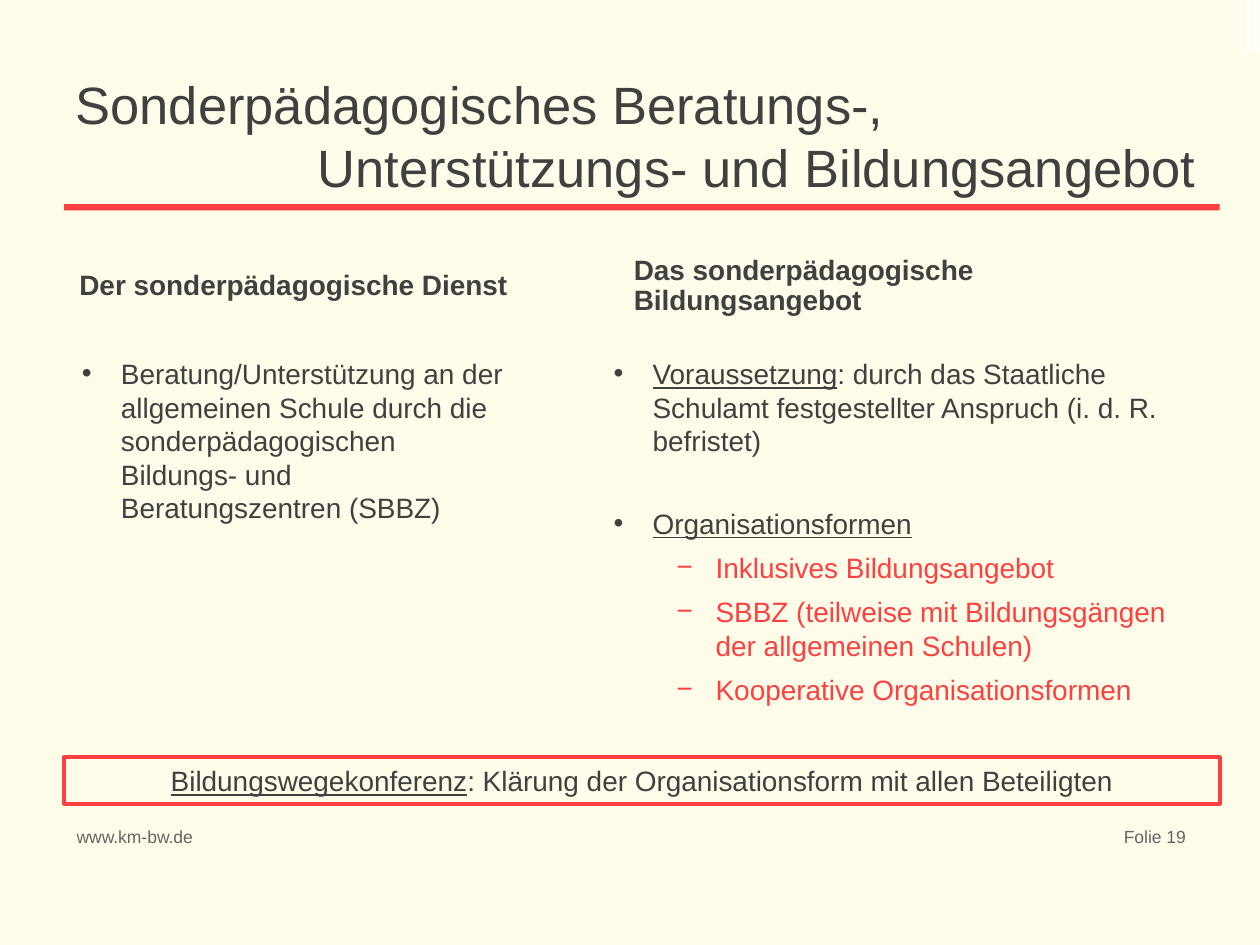
import pptx
import pptx.dml.color
import pptx.enum.shapes
import pptx.enum.text
import pptx.oxml
import pptx.oxml.ns
import pptx.util

COLORS = {
    "paper": "FFFDE9",
    "text": "404040",
    "accent": "FF4040",
    "footer": "646464",
    "strip": "FFFFFF",
}
FONT = "Arial"
LEFT, CONTENT_WIDTH = 0.51, 9.17
RIGHT_COLUMN, RIGHT_WIDTH = 4.75, 4.93
HEADING_TOP, LIST_TOP = 1.92, 2.69
STRIPS = [
    (9.89, 0.03, 0.43, 65),
    (9.94, 0.06, 0.43, 65),
    (9.70, 0.01, 0.64, 30),
    (9.87, 0.01, 0.68, 60),
    (9.75, 0.06, 0.43, 20),
    (9.82, 0.03, 0.43, 40),
]
ALIGN = pptx.enum.text.PP_ALIGN
ANCHOR = pptx.enum.text.MSO_ANCHOR
inches = pptx.util.Inches


def rgb(name):
    return pptx.dml.color.RGBColor.from_string(COLORS[name])


def place(shape, left, top, width, height):
    shape.left, shape.top = inches(left), inches(top)
    shape.width, shape.height = inches(width), inches(height)


def set_frame(frame, side=0.1, top=0.05, bottom=0.05, anchor=ANCHOR.TOP):
    frame.word_wrap = True
    frame.auto_size = pptx.enum.text.MSO_AUTO_SIZE.NONE
    frame.margin_left = frame.margin_right = inches(side)
    frame.margin_top, frame.margin_bottom = inches(top), inches(bottom)
    frame.vertical_anchor = anchor


def indent(paragraph, margin, hanging=0, bullet=None):
    properties = paragraph._p.get_or_add_pPr()
    properties.set("marL", str(inches(margin)))
    properties.set("indent", str(inches(-hanging)))
    if bullet:
        mark = pptx.oxml.parse_xml(
            f'<a:buChar {pptx.oxml.ns.nsdecls("a")} char="{bullet}"/>')
        properties.append(mark)


def style(paragraph, size=16, color="text", bold=False, align=ALIGN.LEFT,
          before=0, after=0, spacing=1.0):
    paragraph.alignment = align
    paragraph.line_spacing = spacing
    paragraph.space_before = pptx.util.Pt(before)
    paragraph.space_after = pptx.util.Pt(after)
    font = paragraph.font
    font.name, font.size, font.bold = FONT, pptx.util.Pt(size), bold
    font.color.rgb = rgb(color)


def write_lead(paragraph, lead, rest=""):
    if lead:
        paragraph.add_run().text = lead
        paragraph.runs[0].font.underline = True
    if rest:
        paragraph.add_run().text = rest


def add_bar(slide, left, top, width, height, color, opacity=100):
    bar = slide.shapes.add_shape(
        pptx.enum.shapes.MSO_SHAPE.RECTANGLE,
        inches(left), inches(top), inches(width), inches(height))
    bar.shadow.inherit = False
    bar.fill.solid()
    bar.fill.fore_color.rgb = rgb(color)
    bar.line.fill.background()
    if opacity < 100:
        tint = bar.fill._xPr.find(".//" + pptx.oxml.ns.qn("a:srgbClr"))
        tint.append(pptx.oxml.parse_xml(
            f'<a:alpha {pptx.oxml.ns.nsdecls("a")} val="{opacity * 1000}"/>'))


def fill_title(title, first, second):
    place(title, 0.5, 0.61, CONTENT_WIDTH, 0.93)
    frame = title.text_frame
    set_frame(frame, anchor=ANCHOR.MIDDLE)
    frame.text = first
    continuation = frame.add_paragraph()
    continuation.text = second
    indent(continuation, 1.92)
    for paragraph in frame.paragraphs:
        style(paragraph, size=30)


def fill_heading(heading, text, left, width, side):
    place(heading, left, HEADING_TOP, width, 0.71)
    set_frame(heading.text_frame, side, 0, 0, ANCHOR.MIDDLE)
    heading.text_frame.text = text
    style(heading.text_frame.paragraphs[0], bold=True, spacing=0.9)


def fill_list(body, items, left, width, height):
    place(body, left, LIST_TOP, width, height)
    frame = body.text_frame
    set_frame(frame, 0.12, 0.14, 0)
    for number, (level, lead, rest, before) in enumerate(items):
        paragraph = frame.add_paragraph() if number else frame.paragraphs[0]
        write_lead(paragraph, lead, rest)
        paragraph.level = level
        indent(paragraph, (0.31, 0.81)[level], 0.31, "•−"[level])
        style(paragraph, color=("text", "accent")[level], before=before, after=6)


def add_conclusion(slide, lead, rest):
    box = slide.shapes.add_shape(
        pptx.enum.shapes.MSO_SHAPE.RECTANGLE,
        inches(LEFT), inches(6.01), inches(CONTENT_WIDTH), inches(0.37))
    box.shadow.inherit = False
    box.fill.background()
    box.line.color.rgb = rgb("accent")
    box.line.width = pptx.util.Pt(2.25)
    set_frame(box.text_frame, anchor=ANCHOR.MIDDLE)
    paragraph = box.text_frame.paragraphs[0]
    write_lead(paragraph, lead, rest)
    style(paragraph, align=ALIGN.CENTER)


def add_footer(slide, text, left, width, align):
    box = slide.shapes.add_textbox(
        inches(left), inches(6.51), inches(width), inches(0.39))
    set_frame(box.text_frame)
    box.text_frame.text = text
    style(box.text_frame.paragraphs[0], size=10, color="footer", align=align)


def main():
    deck = pptx.Presentation()
    deck.slide_width, deck.slide_height = inches(10), inches(7.5)
    slide = deck.slides.add_slide(deck.slide_layouts.get_by_name("Comparison"))
    slide.background.fill.solid()
    slide.background.fill.fore_color.rgb = rgb("paper")
    title, left_heading, left_list, right_heading, right_list = slide.placeholders

    for left, width, height, opacity in STRIPS:
        add_bar(slide, left, 0, width, height, "strip", opacity)
    fill_title(title, "Sonderpädagogisches Beratungs-,",
               "Unterstützungs- und Bildungsangebot")
    add_bar(slide, LEFT, 1.62, CONTENT_WIDTH, 0.05, "accent")

    fill_heading(left_heading, "Der sonderpädagogische Dienst", LEFT, 3.98, 0.12)
    fill_list(left_list, [
        (0, "", "Beratung/Unterstützung an der allgemeinen Schule durch die "
         "sonderpädagogischen Bildungs- und Beratungszentren (SBBZ)", 0),
    ], 0.53, 3.7, 1.69)

    fill_heading(right_heading, "Das sonderpädagogische Bildungsangebot",
                 RIGHT_COLUMN, RIGHT_WIDTH, 0.28)
    fill_list(right_list, [
        (0, "Voraussetzung", ": durch das Staatliche Schulamt festgestellter "
         "Anspruch (i. d. R. befristet)", 0),
        (0, "Organisationsformen", "", 22),
        (1, "", "Inklusives Bildungsangebot", 0),
        (1, "", "SBBZ (teilweise mit Bildungsgängen der allgemeinen Schulen)", 0),
        (1, "", "Kooperative Organisationsformen", 0),
    ], RIGHT_COLUMN, RIGHT_WIDTH, 3.4)

    add_conclusion(slide, "Bildungswegekonferenz",
                   ": Klärung der Organisationsform mit allen Beteiligten")
    add_footer(slide, "www.km-bw.de", LEFT, 1.33, ALIGN.LEFT)
    add_footer(slide, "Folie 19", 8.54, 0.97, ALIGN.RIGHT)
    deck.save("out.pptx")


if __name__ == "__main__":
    main()
